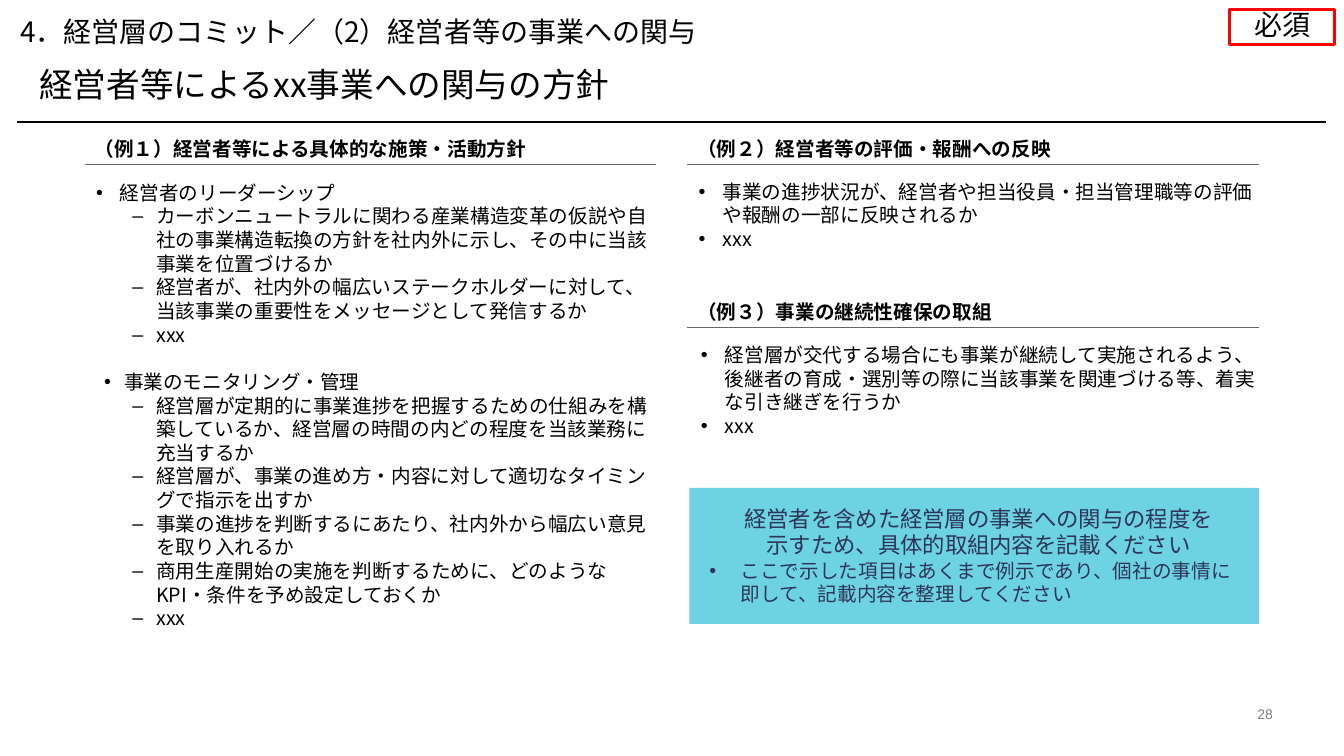
from lxml import etree
from pptx import Presentation
from pptx.dml.color import RGBColor
from pptx.enum.shapes import MSO_CONNECTOR, MSO_SHAPE
from pptx.enum.text import MSO_ANCHOR, MSO_AUTO_SIZE, PP_ALIGN
from pptx.oxml.ns import qn
from pptx.util import Pt

LEFT, CENTER, RIGHT = PP_ALIGN.LEFT, PP_ALIGN.CENTER, PP_ALIGN.RIGHT
TOP, MIDDLE, BOTTOM = MSO_ANCHOR.TOP, MSO_ANCHOR.MIDDLE, MSO_ANCHOR.BOTTOM
RECTANGLE, STRAIGHT = MSO_SHAPE.RECTANGLE, MSO_CONNECTOR.STRAIGHT
JAPANESE, LATIN = "Noto Sans CJK JP", "Arial"
COLORS = {"text": "000000", "paper": "FFFFFF", "rule": "666666", "required": "FF0000",
          "callout": "30C1D7", "callout_text": "2E3558", "number": "808080"}
LEVELS = {"plain": (0, 0, None), "item": (25.2, -17.1, "•"), "topic": (28.1, -14.2, "•"),
          "detail": (51.1, -17.1, "–"), "lead": (6.5, 0, None), "note": (29.5, -22.3, "•")}


def write(shape, lines, size=14, pitch=16.9, color="text", font=JAPANESE, bold=False,
          align=LEFT, anchor=TOP, inset=(0, 0)):
    frame = shape.text_frame
    frame.word_wrap = True
    frame.auto_size = MSO_AUTO_SIZE.NONE
    frame.vertical_anchor = anchor
    frame.margin_left = frame.margin_right = Pt(inset[0])
    frame.margin_top = frame.margin_bottom = Pt(inset[1])
    for index, (level, words) in enumerate(lines):
        paragraph = frame.paragraphs[0] if index == 0 else frame.add_paragraph()
        paragraph.text = words
        paragraph.alignment = align
        paragraph.line_spacing = Pt(pitch)
        paragraph.space_before = Pt(pitch if level == "topic" else 0)
        paragraph.space_after = Pt(0)
        margin, indent, bullet = LEVELS[level]
        properties = paragraph._p.get_or_add_pPr()
        properties.set("marL", str(Pt(margin)))
        properties.set("indent", str(Pt(indent)))
        if bullet:
            etree.SubElement(properties, qn("a:buFont"), typeface=LATIN)
            etree.SubElement(properties, qn("a:buChar"), char=bullet)
        else:
            etree.SubElement(properties, qn("a:buNone"))
        paragraph.font.size = Pt(size)
        paragraph.font.bold = bold
        paragraph.font.color.rgb = RGBColor.from_string(COLORS[color])
        paragraph.font.name = font
        etree.SubElement(properties.find(qn("a:defRPr")), qn("a:ea"), typeface=JAPANESE)


def draw_rule(x, y, width, color, weight):
    rule = slide.shapes.add_connector(STRAIGHT, Pt(x), Pt(y), Pt(x + width), Pt(y))
    rule.line.color.rgb = RGBColor.from_string(COLORS[color])
    rule.line.width = Pt(weight)
    etree.SubElement(rule._element.spPr, qn("a:effectLst"))


prs = Presentation()
prs.slide_width, prs.slide_height = Pt(960), Pt(540)
slide = prs.slides.add_slide(prs.slide_layouts[4])

LEFT_COLUMN, RIGHT_COLUMN, COLUMN_WIDTH = 60.5, 491, 408.2

headings = [
    (0, (28, 51.1, 885.6, 26), 24, 23.5, "経営者等によるxx事業への関与の方針"),
    (1, (14.4, 14.4, 935.3, 21.6), 20, 20, "4．経営層のコミット／（2）経営者等の事業への関与"),
]
for slot, box, size, pitch, words in headings:
    heading = slide.placeholders[slot]
    heading.left, heading.top, heading.width, heading.height = map(Pt, box)
    write(heading, [("plain", words)], size, pitch)

draw_rule(12.2, 87.1, 935.3, "text", 1)

examples = [
    (2, LEFT_COLUMN, 95, "（例１）経営者等による具体的な施策・活動方針", (60.5, 128.9, 408.2, 324.7), [
        ("item", "経営者のリーダーシップ"),
        ("detail", "カーボンニュートラルに関わる産業構造変革の仮説や自社の事業構造転換の方針を社内外に示し、その中に当該事業を位置づけるか"),
        ("detail", "経営者が、社内外の幅広いステークホルダーに対して、当該事業の重要性をメッセージとして発信するか"),
        ("detail", "xxx"),
        ("topic", "事業のモニタリング・管理"),
        ("detail", "経営層が定期的に事業進捗を把握するための仕組みを構築しているか、経営層の時間の内どの程度を当該業務に充当するか"),
        ("detail", "経営層が、事業の進め方・内容に対して適切なタイミングで指示を出すか"),
        ("detail", "事業の進捗を判断するにあたり、社内外から幅広い意見を取り入れるか"),
        ("detail", "商用生産開始の実施を判断するために、どのようなKPI・条件を予め設定しておくか"),
        ("detail", "xxx")]),
    (3, RIGHT_COLUMN, 95, "（例２）経営者等の評価・報酬への反映", (491, 128.2, 406.1, 64.8), [
        ("item", "事業の進捗状況が、経営者や担当役員・担当管理職等の評価や報酬の一部に反映されるか"),
        ("item", "xxx")]),
    (4, RIGHT_COLUMN, 211.7, "（例３）事業の継続性確保の取組", (492.5, 244.8, 406.8, 74.2), [
        ("item", "経営層が交代する場合にも事業が継続して実施されるよう、後継者の育成・選別等の際に当該事業を関連づける等、着実な引き継ぎを行うか"),
        ("item", "xxx")]),
]
for slot, x, y, caption, box, points in examples:
    header = slide.shapes.add_shape(RECTANGLE, Pt(x), Pt(y), Pt(COLUMN_WIDTH), Pt(22.3))
    header.shadow.inherit = False
    header.fill.solid()
    header.fill.fore_color.rgb = RGBColor.from_string(COLORS["paper"])
    header.line.fill.background()
    write(header, [("plain", caption)], bold=True, anchor=MIDDLE, inset=(7.2, 3.6))
    draw_rule(x, y + 22.3, COLUMN_WIDTH, "rule", 0.75)
    body = slide.placeholders[slot]
    body.left, body.top, body.width, body.height = map(Pt, box)
    write(body, points)

required = slide.shapes.add_shape(RECTANGLE, Pt(878.4), Pt(6.5), Pt(74.9), Pt(25.2))
required.shadow.inherit = False
required.fill.background()
required.line.color.rgb = RGBColor.from_string(COLORS["required"])
required.line.width = Pt(2.25)
write(required, [("plain", "必須")], 20, 20, align=CENTER, anchor=MIDDLE)

callout = slide.shapes.add_shape(RECTANGLE, Pt(492.5), Pt(348.5), Pt(406.8), Pt(97.2))
callout.shadow.inherit = False
callout.fill.solid()
callout.fill.fore_color.rgb = RGBColor.from_string(COLORS["callout"])
tint = callout._element.spPr.find(qn("a:solidFill")).find(qn("a:srgbClr"))
etree.SubElement(tint, qn("a:alpha"), val="70000")
callout.line.fill.background()
write(callout, [
    ("lead", "経営者を含めた経営層の事業への関与の程度を\n示すため、具体的取組内容を記載ください"),
    ("note", "ここで示した項目はあくまで例示であり、個社の事情に即して、記載内容を整理してください"),
], color="callout_text", font=LATIN, anchor=MIDDLE, inset=(7.2, 3.6))
lead, note = callout.text_frame.paragraphs
lead.alignment = CENTER
lead.line_spacing = Pt(18.6)
lead.font.size = Pt(16)

page_number = slide.shapes.add_textbox(Pt(879.1), Pt(504), Pt(30.2), Pt(12.2))
write(page_number, [("plain", "28")], 10, 12, "number", LATIN, align=RIGHT, anchor=BOTTOM)

prs.save("out.pptx")
